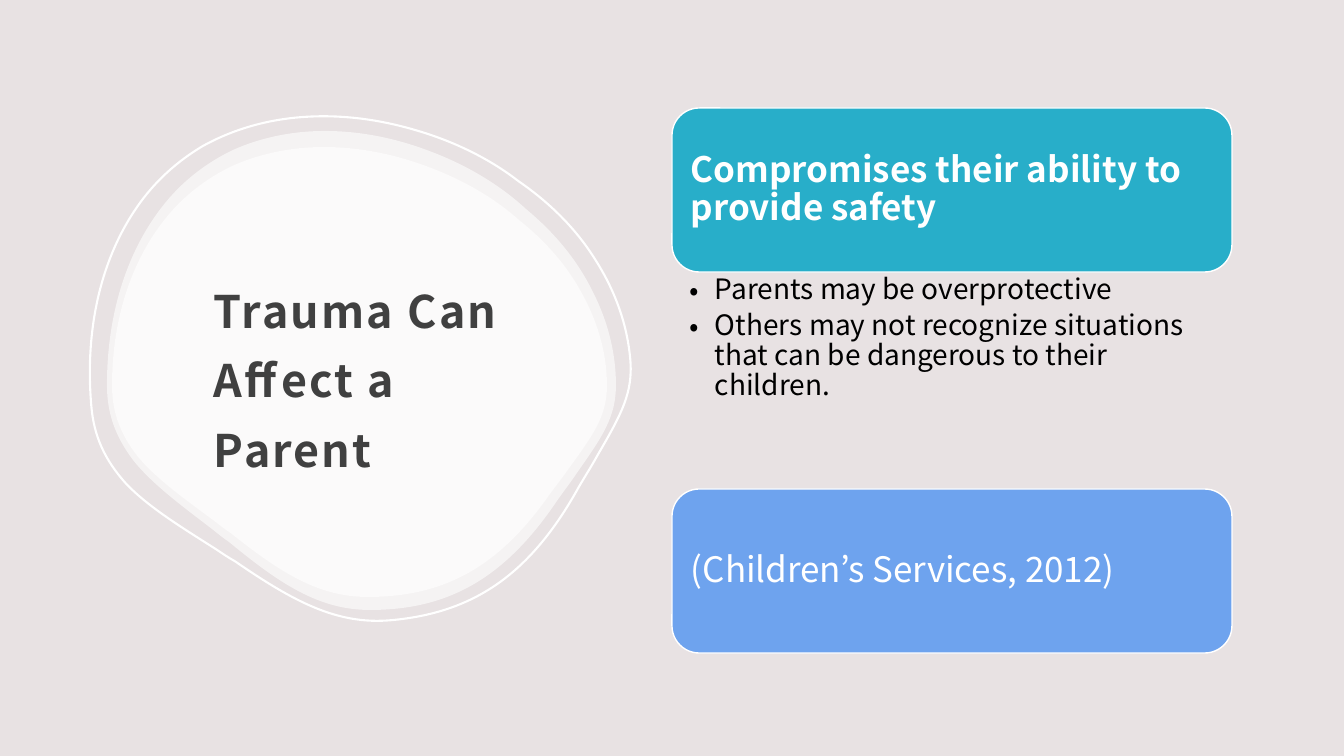
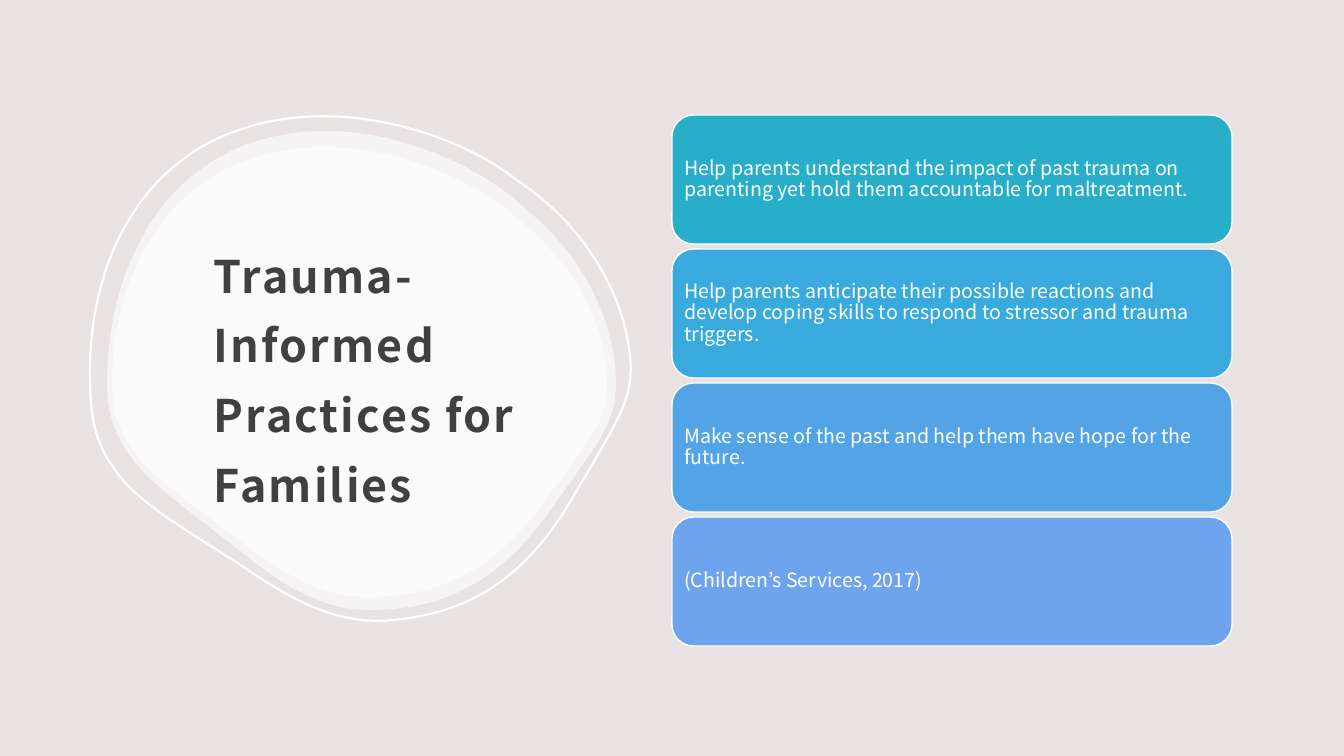
from pptx import Presentation
from pptx.dml.color import RGBColor
from pptx.enum.shapes import MSO_SHAPE
from pptx.enum.text import MSO_ANCHOR, PP_ALIGN
from pptx.oxml.ns import qn
from pptx.util import Pt
from lxml import etree

ROUNDED = MSO_SHAPE.ROUNDED_RECTANGLE
MIDDLE, TOP = MSO_ANCHOR.MIDDLE, MSO_ANCHOR.TOP
LEFT = PP_ALIGN.LEFT

SCALE = 914400 / 100.8
FONT = "Noto Sans CJK JP"
BACKGROUND, WHITE, BLACK, TITLE_COLOR = "E8E2E3", "FFFFFF", "000000", "404040"
TEAL, SKY, AZURE, PERIWINKLE = "28AEC9", "38AADD", "52A4E6", "6EA3EE"

SLIDE_SIZE = (1344, 756)
TITLE_BOX = (202, 209, 365, 324)
CARD_LEFT, CARD_WIDTH = 672, 560

BLOB_SIZE = (509, 479)
BLOB_START = (218, 0)
BLOB_CURVES = [
    ((184, 0), (153, 7), (126, 19)),
    ((101, 31), (78, 48), (59, 71)),
    ((21, 117), (0, 181), (0, 254)),
    ((0, 282), (8, 305), (26, 329)),
    ((45, 353), (75, 375), (105, 398)),
    ((110, 402), (116, 407), (122, 411)),
    ((173, 453), (212, 479), (263, 479)),
    ((342, 479), (398, 447), (450, 370)),
    ((457, 360), (464, 351), (470, 342)),
    ((496, 305), (509, 286), (509, 254)),
    ((509, 222), (501, 190), (485, 159)),
    ((470, 129), (448, 102), (419, 78)),
    ((392, 53), (359, 34), (325, 21)),
    ((289, 7), (253, 0), (218, 0)),
]
BLOBS = [
    {"box": (107, 131, 509, 479), "opacity": 60},
    {"box": (112, 147, 495, 450), "opacity": 60},
    {"box": (89, 113, 541, 509), "outline": 1.5, "rotation": 355},
]

SLIDES = [
    {
        "title": "Trauma Can Affect a Parent",
        "top": 108, "height": 164, "gap": 217, "inset": 11, "size": 25,
        "cards": [
            {"text": "Compromises their ability to provide safety", "fill": TEAL, "bold": True,
             "bullets": [
                 "Parents may be overprotective",
                 "Others may not recognize situations that can be dangerous to their children.",
             ]},
            {"text": "(Children’s Services, 2012)", "fill": PERIWINKLE},
        ],
    },
    {
        "title": "Trauma-Informed Practices for Families",
        "top": 115, "height": 129, "gap": 5, "inset": 6, "size": 14,
        "cards": [
            {"text": "Help parents understand the impact of past trauma on parenting "
                     "yet hold them accountable for maltreatment.", "fill": TEAL},
            {"text": "Help parents anticipate their possible reactions and develop coping "
                     "skills to respond to stressor and trauma triggers.", "fill": SKY},
            {"text": "Make sense of the past and help them have hope for the future.", "fill": AZURE},
            {"text": "(Children’s Services, 2017)", "fill": PERIWINKLE},
        ],
    },
]


def px(value):
    return round(value * SCALE)


def paint(target, color):
    target.solid()
    target.fore_color.rgb = RGBColor.from_string(color)


def set_all(target, values):
    for name, value in values.items():
        setattr(target, name, value)


def write(shape, texts, insets, size, color, bold=False, anchor=MIDDLE, line_spacing=0.9, space_after=0):
    frame = shape.text_frame
    left, top, right, bottom = map(px, insets)
    set_all(frame, {"word_wrap": True, "vertical_anchor": anchor, "margin_left": left,
                    "margin_top": top, "margin_right": right, "margin_bottom": bottom})
    for index, text in enumerate(texts):
        paragraph = frame.add_paragraph() if index else frame.paragraphs[0]
        set_all(paragraph, {"alignment": LEFT, "line_spacing": line_spacing,
                            "space_after": Pt(space_after)})
        run = paragraph.add_run()
        run.text = text
        set_all(run.font, {"name": FONT, "size": Pt(size), "bold": bold})
        run.font.color.rgb = RGBColor.from_string(color)
    return frame.paragraphs


def bend_sides(shape, curves):
    sides = list(shape._element.iter(qn("a:lnTo")))
    for side, curve in zip(sides, curves):
        bend = etree.Element(qn("a:cubicBezTo"))
        for x, y in curve:
            etree.SubElement(bend, qn("a:pt"), x=str(x), y=str(y))
        side.getparent().replace(side, bend)


def add_blob(slide, box, opacity=None, outline=None, rotation=0):
    left, top, width, height = box

    def fit(point):
        return px(point[0] * width / BLOB_SIZE[0]), px(point[1] * height / BLOB_SIZE[1])

    curves = [[fit(point) for point in curve] for curve in BLOB_CURVES]
    builder = slide.shapes.build_freeform(*fit(BLOB_START), scale=1.0)
    builder.add_line_segments([curve[-1] for curve in curves], close=True)
    shape = builder.convert_to_shape(px(left), px(top))
    bend_sides(shape, curves)
    shape.shadow.inherit = False
    shape.rotation = rotation
    if opacity:
        paint(shape.fill, WHITE)
        color = shape._element.spPr.find(qn("a:solidFill"))[0]
        etree.SubElement(color, qn("a:alpha"), val=str(opacity * 1000))
    else:
        shape.fill.background()
    if outline:
        paint(shape.line.fill, WHITE)
        shape.line.width = Pt(outline)
    else:
        shape.line.fill.background()


def add_title(slide, title):
    box = slide.shapes.add_textbox(*map(px, TITLE_BOX))
    paragraphs = write(box, [title], (12, 12, 12, 10), 32, TITLE_COLOR, bold=True, line_spacing=1.3)
    paragraphs[0].runs[0].font._element.set("spc", "150")


def add_card(slide, card, top, height, inset, size):
    shape = slide.shapes.add_shape(ROUNDED, *map(px, (CARD_LEFT, top, CARD_WIDTH, height)))
    shape.shadow.inherit = False
    paint(shape.fill, card["fill"])
    paint(shape.line.fill, WHITE)
    shape.line.width = Pt(1)
    write(shape, [card["text"]], [inset] * 4, size, WHITE, bold=card.get("bold", False))


def add_bullets(slide, bullets, top, height):
    box = slide.shapes.add_textbox(*map(px, (CARD_LEFT, top, CARD_WIDTH, height)))
    for paragraph in write(box, bullets, (18, 3, 19, 3), 20, BLACK, anchor=TOP, space_after=4):
        properties = paragraph._p.get_or_add_pPr()
        properties.set("marL", str(px(25)))
        properties.set("indent", str(px(-25)))
        etree.SubElement(properties, qn("a:buFont"), typeface=FONT)
        etree.SubElement(properties, qn("a:buChar"), char="•")


def main():
    presentation = Presentation()
    presentation.slide_width, presentation.slide_height = map(px, SLIDE_SIZE)
    paint(presentation.slide_master.background.fill, BACKGROUND)
    for content in SLIDES:
        slide = presentation.slides.add_slide(presentation.slide_layouts[6])
        for blob in BLOBS:
            add_blob(slide, **blob)
        add_title(slide, content["title"])
        height, gap = content["height"], content["gap"]
        for index, card in enumerate(content["cards"]):
            top = content["top"] + index * (height + gap)
            add_card(slide, card, top, height, content["inset"], content["size"])
            if "bullets" in card:
                add_bullets(slide, card["bullets"], top + height, gap)
    presentation.save("out.pptx")


if __name__ == "__main__":
    main()
